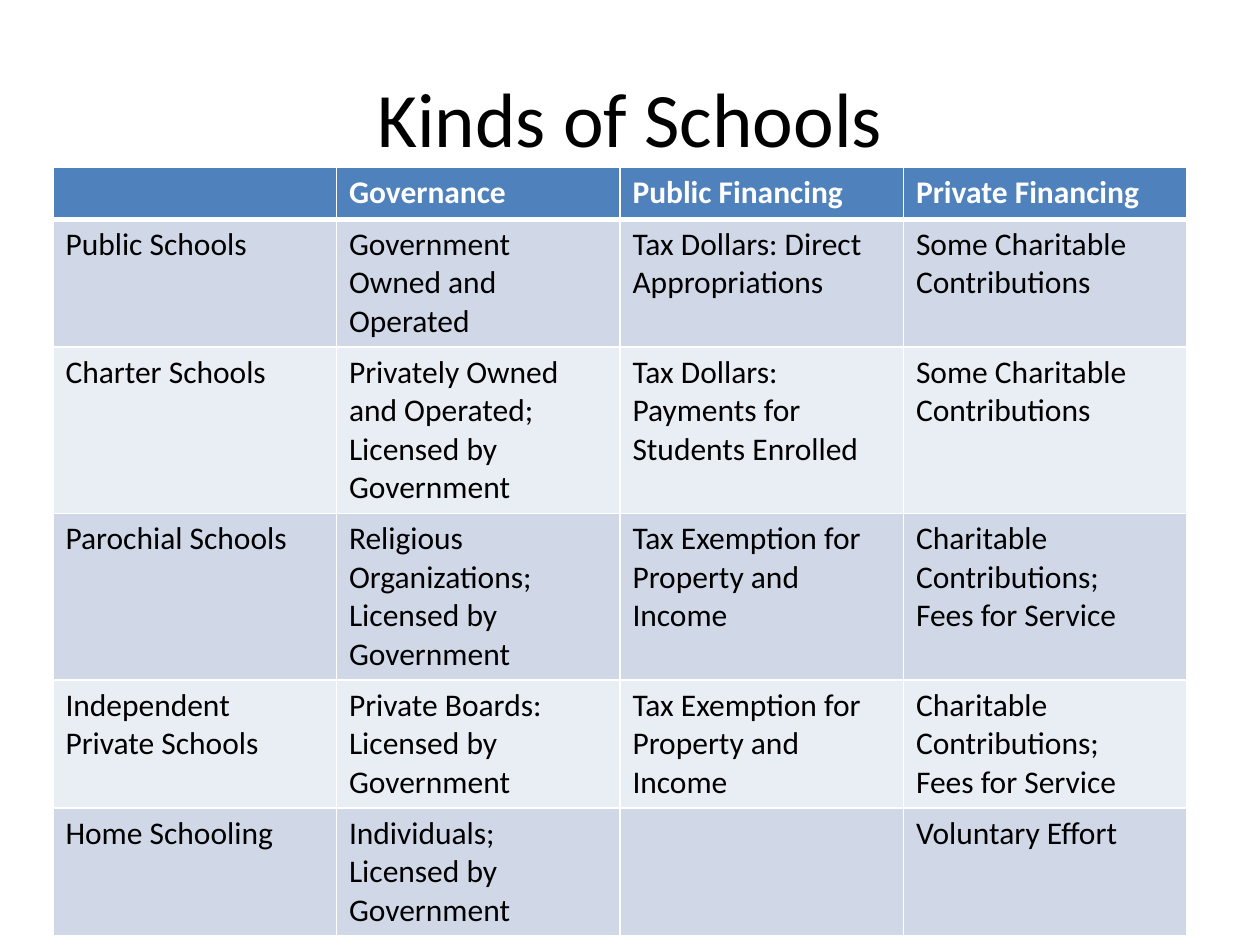
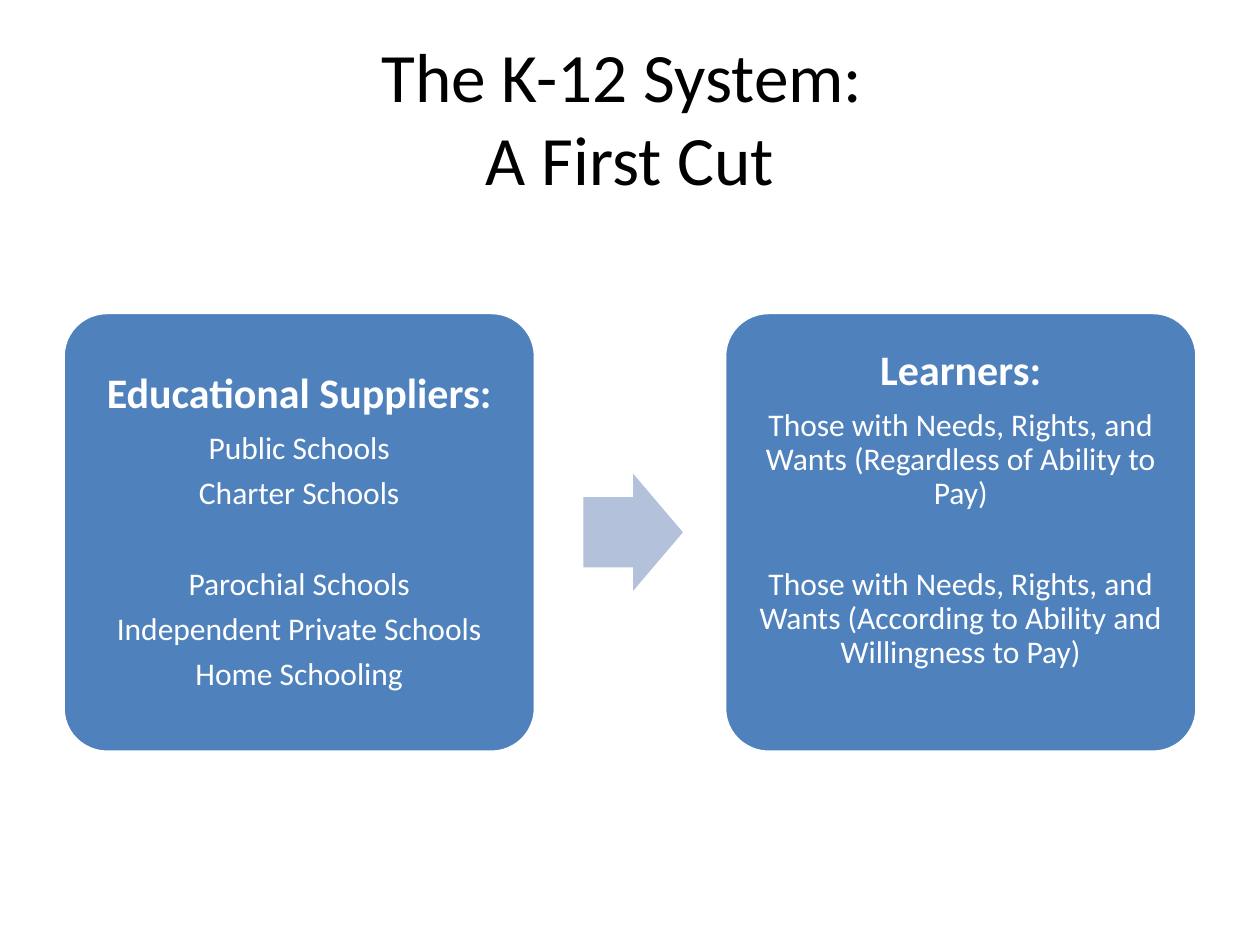
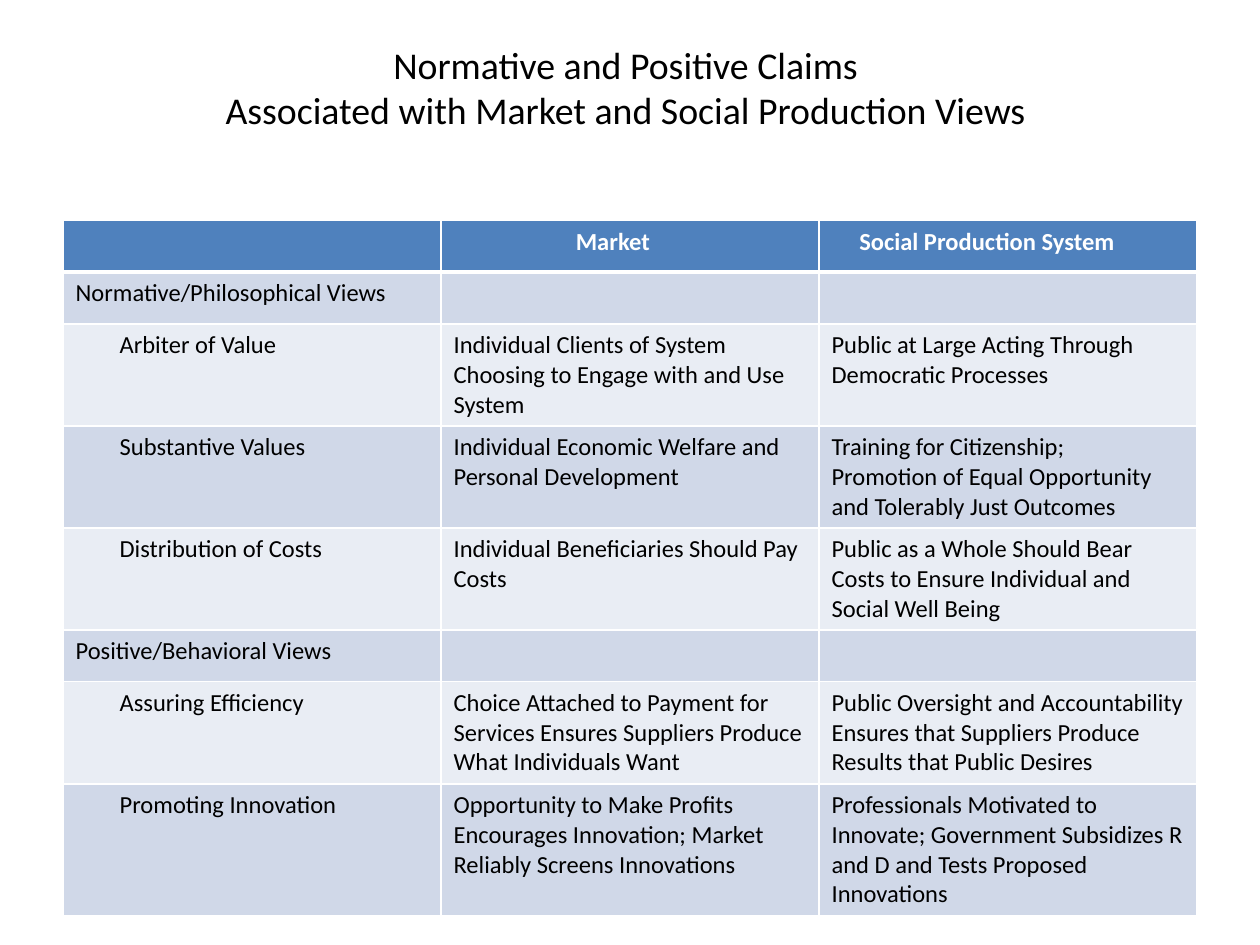
from lxml import etree
from pptx import Presentation
from pptx.dml.color import RGBColor as RGB
from pptx.enum.shapes import MSO_SHAPE as SHAPE
from pptx.enum.text import MSO_ANCHOR as ANCHOR, MSO_AUTO_SIZE as AUTO, PP_ALIGN as ALIGN
from pptx.oxml.ns import qn
from pptx.util import Inches, Pt

C = {"blue": "4F81BD", "band_dark": "D0D8E8", "band_light": "E9EDF4",
     "arrow": "B3C1DB", "white": "FFFFFF", "black": "000000"}
FONT = "Calibri"


def write(tf, text, size=18, color="black", bold=False, align=None,
          first=True, line=None, before=None, after=None):
    """Write text as one paragraph per line; a vertical tab breaks a line."""
    for i, part in enumerate(text.split("\n")):
        p = tf.paragraphs[0] if first and i == 0 else tf.add_paragraph()
        p.alignment, p.line_spacing = align, line
        p.space_before, p.space_after = before, after
        p.text = part
        for r in p.runs:
            r.font.name, r.font.size, r.font.bold = FONT, Pt(size), bold
            r.font.color.rgb = RGB.from_string(C[color])


def add_table(slide, rows, left, top, size, indents):
    """Add a banded table; indents maps (row, column) to an extra left margin."""
    n_cols = len(rows[0])
    table = slide.shapes.add_table(len(rows), n_cols, Inches(left), Inches(top),
                                   Inches(9), Inches(0.41 * len(rows))).table
    for i, row in enumerate(rows):
        table.rows[i].height = Inches(0.41)
        for j, text in enumerate(row):
            cell = table.cell(i, j)
            # White borders, heavier below the header
            tc_pr = cell._tc.get_or_add_tcPr()
            for side in "LRTB":
                heavy = (i, side) in ((0, "B"), (1, "T"))
                ln = etree.SubElement(tc_pr, qn("a:ln" + side), w=str(Pt(3 if heavy else 1)))
                fill = etree.SubElement(ln, qn("a:solidFill"))
                etree.SubElement(fill, qn("a:srgbClr"), val=C["white"])
            band = "blue" if i == 0 else "band_dark" if i % 2 else "band_light"
            cell.fill.solid()
            cell.fill.fore_color.rgb = RGB.from_string(C[band])
            cell.margin_left = Inches(0.1 + indents.get((i, j), 0))
            if text:
                write(cell.text_frame, text, size=size, bold=i == 0,
                      color="white" if i == 0 else "black")


prs = Presentation()
prs.slide_width, prs.slide_height = Inches(10), Inches(7.5)

# Slides and titles
titles = [
    ("Kinds of Schools", 44, 1.25),
    ("The K-12 System: \vA First Cut", 39.6, 1.25),
    ("Normative and Positive Claims \vAssociated with Market and Social Production Views ", 21.6, 0.78),
]
slides = []
for text, size, height in titles:
    s = prs.slides.add_slide(prs.slide_layouts[5])
    title = s.shapes.title
    title.left, title.top, title.width, title.height = (
        Inches(v) for v in (0.5, 0.3, 9, height))
    tf = title.text_frame
    tf.auto_size, tf.vertical_anchor = AUTO.NONE, ANCHOR.MIDDLE
    write(tf, text, size=size, align=ALIGN.CENTER)
    slides.append(s)

# Slide 1: kinds of schools
schools = [
    ["", "Governance", "Public Financing", "Private Financing"],
    ["Public Schools", "Government Owned and Operated",
     "Tax Dollars: Direct Appropriations", "Some Charitable Contributions"],
    ["Charter Schools", "Privately Owned and Operated; Licensed by Government",
     "Tax Dollars: Payments for Students Enrolled", "Some Charitable Contributions"],
    ["Parochial Schools", "Religious Organizations; Licensed by Government",
     "Tax Exemption for Property and Income", "Charitable Contributions;\nFees for Service"],
    ["Independent Private Schools", "Private Boards: Licensed by Government",
     "Tax Exemption for Property and Income", "Charitable Contributions;\nFees for Service"],
    ["Home Schooling", "Individuals; Licensed by Government", "", "Voluntary Effort"],
]
add_table(slides[0], schools, 0.42, 1.33, 18, {})

# Slide 2: suppliers and learners, each with two groups of lines
boxes = [
    (0.5, 0.1, "Educational Suppliers:", "Public Schools\nCharter Schools",
     "Parochial Schools", "Independent Private Schools\nHome Schooling"),
    (5.75, 0.46, "Learners:",
     "Those with Needs, Rights, and Wants (Regardless of Ability to Pay)",
     "Those with Needs, Rights, and Wants (According to Ability and Willingness to Pay)", ""),
]
for left, bottom_inset, heading, upper, lower, rest in boxes:
    sp = slides[1].shapes.add_shape(SHAPE.ROUNDED_RECTANGLE, Inches(left), Inches(2.48),
                                    Inches(3.75), Inches(3.49))
    sp.adjustments[0] = 0.1
    sp.shadow.inherit = False
    sp.fill.solid()
    sp.fill.fore_color.rgb = RGB.from_string(C["blue"])
    sp.line.color.rgb = RGB.from_string(C["white"])
    sp.line.width = Pt(2)
    tf = sp.text_frame
    tf.word_wrap, tf.vertical_anchor = True, ANCHOR.MIDDLE
    tf.margin_left = tf.margin_right = tf.margin_top = Inches(0.1)
    tf.margin_bottom = Inches(bottom_inset)
    style = dict(color="white", align=ALIGN.CENTER, line=0.9)
    write(tf, heading, size=24, bold=True, after=Pt(8.4), **style)
    write(tf, upper, first=False, after=Pt(6.3), **style)
    write(tf, lower, first=False, before=Pt(26), after=Pt(6.3), **style)
    if rest:
        write(tf, rest, first=False, after=Pt(6.3), **style)

# Arrow between the boxes
sp = slides[1].shapes.add_shape(SHAPE.RIGHT_ARROW, Inches(4.63), Inches(3.76),
                                Inches(0.79), Inches(0.93))
sp.adjustments[0], sp.adjustments[1] = 0.6, 0.5
sp.shadow.inherit = False
sp.fill.solid()
sp.fill.fore_color.rgb = RGB.from_string(C["arrow"])
sp.line.fill.background()

# Slide 3: claims of the two views
claims = [
    ["", "Market", "Social Production System"],
    ["Normative/Philosophical Views", "", ""],
    ["Arbiter of Value", "Individual Clients of System Choosing to Engage with and Use System",
     "Public at Large Acting Through Democratic Processes"],
    ["Substantive Values", "Individual Economic Welfare and Personal Development",
     "Training for Citizenship;\nPromotion of Equal Opportunity and Tolerably Just Outcomes"],
    ["Distribution of Costs", "Individual Beneficiaries Should Pay Costs",
     "Public as a Whole Should Bear Costs to Ensure Individual and Social Well Being"],
    ["Positive/Behavioral Views", "", ""],
    ["Assuring Efficiency",
     "Choice Attached to Payment for Services Ensures Suppliers Produce What Individuals Want",
     "Public Oversight and Accountability Ensures that Suppliers Produce Results that Public Desires"],
    ["Promoting Innovation",
     "Opportunity to Make Profits Encourages Innovation; Market Reliably Screens Innovations",
     "Professionals Motivated to Innovate; Government Subsidizes R and D and Tests Proposed Innovations"],
]
indents = {(i, 0): 0.35 for i, row in enumerate(claims) if row[1]}
indents.update({(0, 1): 0.97, (0, 2): 0.22})
add_table(slides[2], claims, 0.5, 1.75, 14, indents)

prs.save("out.pptx")
